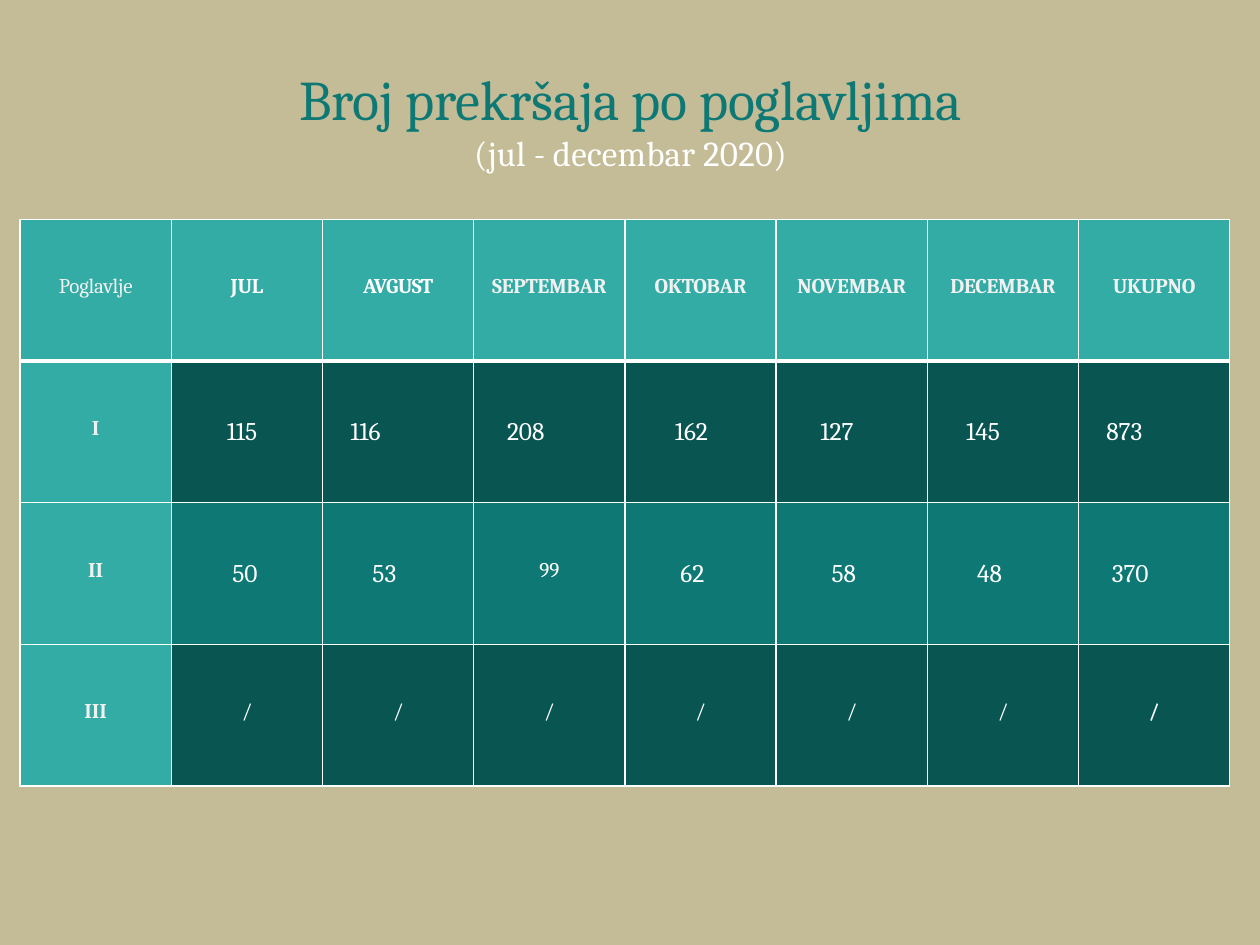
from lxml import etree
from pptx import Presentation
from pptx.dml.color import RGBColor
from pptx.enum.text import PP_ALIGN
from pptx.oxml.ns import qn
from pptx.util import Inches, Pt

CENTER, LEFT = PP_ALIGN.CENTER, PP_ALIGN.LEFT
WHITE, PALE = "FFFFFF", "F1F1F1"
TEAL, LIGHT_TEAL, DARK_TEAL = "0E7974", "33ACA6", "095552"
SAND = "C4BC96"
INDENT_STEP = 0.044  # inches


def color(hex_string):
    return RGBColor.from_string(hex_string)


def add_run(paragraph, text, size, hex_color, bold=False, spacing=0):
    run = paragraph.add_run()
    run.text = text
    run.font.name = "Cambria"
    run.font.size = Pt(size)
    run.font.bold = bold
    run.font.color.rgb = color(hex_color)
    run.font._element.set("spc", str(round(spacing * 100)))


presentation = Presentation()
presentation.slide_width = Inches(10)
presentation.slide_height = Inches(7.5)
slide = presentation.slides.add_slide(presentation.slide_layouts[6])
slide.background.fill.solid()
slide.background.fill.fore_color.rgb = color(SAND)

# Title and period
title = slide.shapes.add_textbox(Inches(2.2), Inches(0.5), Inches(5.61), Inches(0.9))
frame = title.text_frame
frame.word_wrap = True
frame.margin_left = frame.margin_right = frame.margin_bottom = 0
frame.margin_top = Inches(0.01)
heading = frame.paragraphs[0]
heading.alignment = CENTER
heading.space_before = Pt(0.9)
add_run(heading, "Broj prekršaja po poglavljima", 32, TEAL, spacing=-0.1)
period = frame.add_paragraph()
period.alignment = CENTER
period.space_before = Pt(0.3)
for text, spacing in (("(jul ", 0.1), ("- ", -0.1), ("decembar 2020)", 0.1)):
    add_run(period, text, 20, WHITE, spacing=spacing)

# Table contents; indents are in steps, None means centred
rows = [
    ["Poglavlje", "JUL", "AVGUST", "SEPTEMBAR", "OKTOBAR", "NOVEMBAR", "DECEMBAR", "UKUPNO"],
    ["I", "115", "116", "208", "162", "127", "145", "873"],
    ["II", "50", "53", "99", "62", "58", "48", "370"],
    ["III"] + ["/"] * 7,
]
indents = [
    [None] * 8,
    [None, 10, 5, 6, 9, 8, 7, 5],
    [None, 11, 9, None, 10, 10, 9, 6],
    [None] * 8,
]
row_fills = [LIGHT_TEAL, DARK_TEAL, TEAL, DARK_TEAL]
table = slide.shapes.add_table(
    len(rows), len(rows[0]), Inches(0.16), Inches(1.74), Inches(9.6), Inches(4.5)
).table
for column in table.columns:
    column.width = Inches(1.2)
for table_row in table.rows:
    table_row.height = Inches(4.5 / len(rows))

for row, texts in enumerate(rows):
    for column, text in enumerate(texts):
        cell = table.cell(row, column)
        indent = indents[row][column]
        is_label = row == 0 or column == 0

        # Text
        cell.margin_left = cell.margin_right = cell.margin_bottom = 0
        cell.margin_top = Inches(0.44 if indent is None else 0.45)
        paragraph = cell.text_frame.paragraphs[0]
        paragraph.alignment = CENTER if indent is None else LEFT
        if indent is not None:
            paragraph._p.get_or_add_pPr().set("marL", str(Inches(indent * INDENT_STEP)))
        add_run(
            paragraph,
            text,
            12 if indent is None else 14.5,
            PALE if is_label and text not in ("JUL", "AVGUST") else WHITE,
            bold=(is_label and text != "Poglavlje") or (row == 3 and column == 7),
            spacing=-0.3 if text == "AVGUST" else -0.1 if row == 0 else 0,
        )

        # Borders, with a thick rule below the header, then the fill
        properties = cell._tc.get_or_add_tcPr()
        for side in ("L", "R", "T", "B"):
            thick = (row, side) in ((0, "B"), (1, "T"))
            border = etree.SubElement(properties, qn(f"a:ln{side}"), w=str(Pt(3 if thick else 1)))
            solid = etree.SubElement(border, qn("a:solidFill"))
            etree.SubElement(solid, qn("a:srgbClr"), val=WHITE)
        cell.fill.solid()
        cell.fill.fore_color.rgb = color(LIGHT_TEAL if is_label else row_fills[row])

presentation.save("out.pptx")
